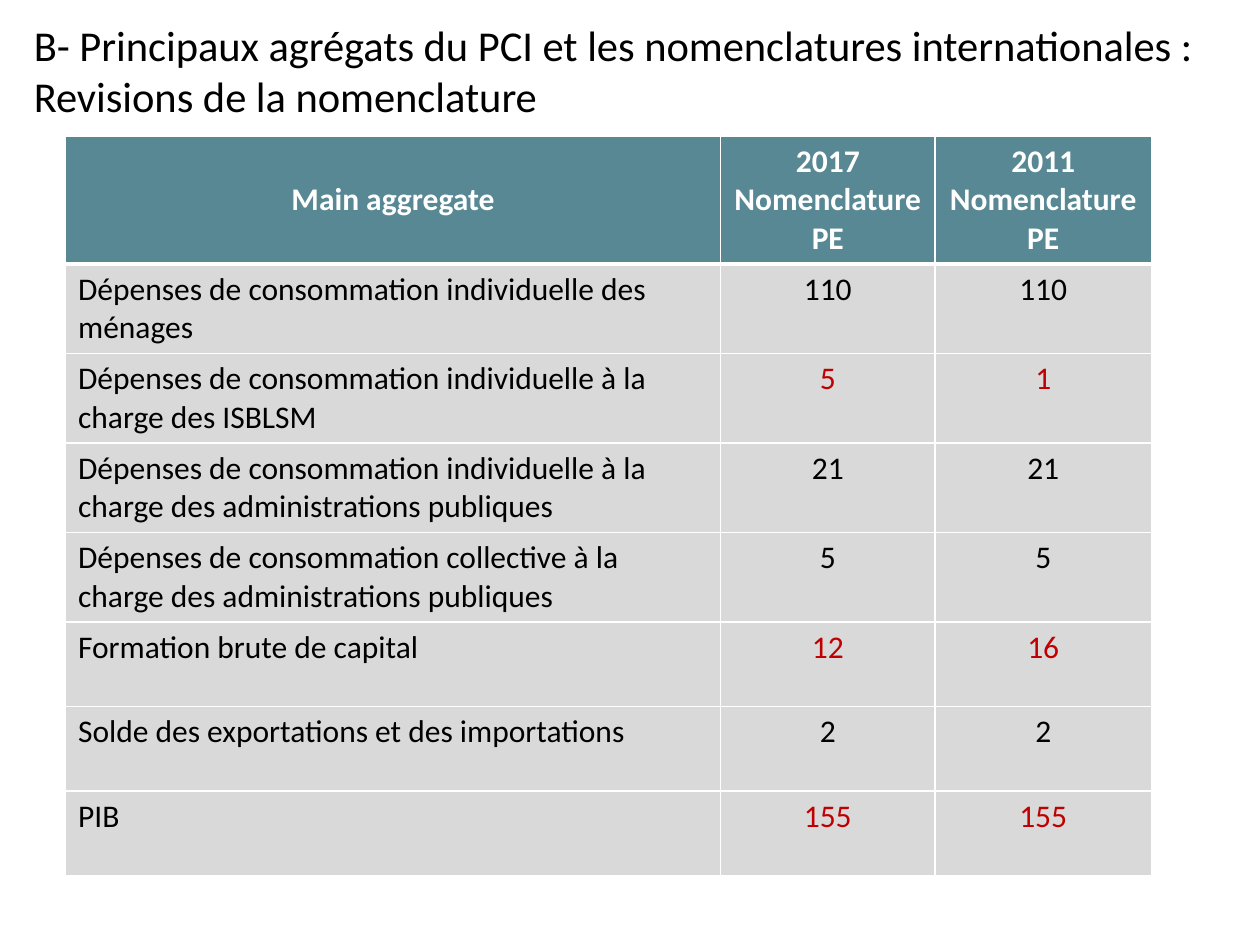
from lxml import etree
from pptx import Presentation
from pptx.dml.color import RGBColor
from pptx.enum.text import MSO_ANCHOR, PP_ALIGN
from pptx.oxml.ns import qn
from pptx.util import Inches, Pt

CENTER, LEFT = PP_ALIGN.CENTER, PP_ALIGN.LEFT
MIDDLE, TOP = MSO_ANCHOR.MIDDLE, MSO_ANCHOR.TOP

BLACK = RGBColor(0, 0, 0)
WHITE = RGBColor(255, 255, 255)
TEAL = RGBColor(0x58, 0x88, 0x94)
GREY = RGBColor(0xD9, 0xD9, 0xD9)
RED = RGBColor(0xC0, 0, 0)
FONT = "Calibri"

TITLE = ("B- Principaux agrégats du PCI et les nomenclatures internationales : "
         "Revisions de la nomenclature")
HEADER = ("Main aggregate", "2017\nNomenclature\nPE", "2011\nNomenclature\nPE")
# label, 2017 count, 2011 count, highlighted
AGGREGATES = [
    ("Dépenses de consommation individuelle des ménages", 110, 110, False),
    ("Dépenses de consommation individuelle à la charge des ISBLSM", 5, 1, True),
    ("Dépenses de consommation individuelle à la charge des administrations publiques",
     21, 21, False),
    ("Dépenses de consommation collective à la charge des administrations publiques",
     5, 5, False),
    ("Formation brute de capital", 12, 16, True),
    ("Solde des exportations et des importations", 2, 2, False),
    ("PIB", 155, 155, True),
]
COLUMN_WIDTHS = (5.2, 1.7, 1.72)
HEADER_HEIGHT, ROW_HEIGHT = 1.01, 0.67
THIN, THICK = 1, 3


def write(frame, text, size, color, bold=False, align=LEFT):
    frame.text = text
    for paragraph in frame.paragraphs:
        paragraph.alignment = align
        for run in paragraph.runs:
            font = run.font
            font.name, font.size, font.bold = FONT, Pt(size), bold
            font.color.rgb = color


def add_borders(cell, top, bottom):
    """Draw white cell borders; must precede the fill in the cell properties."""
    properties = cell._tc.get_or_add_tcPr()
    for side, width in (("L", THIN), ("R", THIN), ("T", top), ("B", bottom)):
        line = etree.SubElement(properties, qn(f"a:ln{side}"), w=str(Pt(width)))
        fill = etree.SubElement(line, qn("a:solidFill"))
        etree.SubElement(fill, qn("a:srgbClr"), val=str(WHITE))


def add_title(slide):
    box = slide.shapes.add_textbox(Inches(0.17), Inches(0.17), Inches(9.6), Inches(0.77))
    frame = box.text_frame
    frame.word_wrap = True
    frame.vertical_anchor = MIDDLE
    write(frame, TITLE, 24.3, BLACK)


def add_aggregates(slide):
    row_count = len(AGGREGATES) + 1
    height = HEADER_HEIGHT + ROW_HEIGHT * len(AGGREGATES)
    table = slide.shapes.add_table(
        row_count, len(HEADER), Inches(0.52), Inches(1.08),
        Inches(sum(COLUMN_WIDTHS)), Inches(height)).table
    for column, width in zip(table.columns, COLUMN_WIDTHS):
        column.width = Inches(width)
    for r, values in enumerate([HEADER] + [row[:3] for row in AGGREGATES]):
        is_header = r == 0
        highlighted = not is_header and AGGREGATES[r - 1][3]
        table.rows[r].height = Inches(HEADER_HEIGHT if is_header else ROW_HEIGHT)
        for c, value in enumerate(values):
            cell = table.cell(r, c)
            add_borders(cell, THICK if r == 1 else THIN, THICK if is_header else THIN)
            cell.fill.solid()
            cell.fill.fore_color.rgb = TEAL if is_header else GREY
            cell.vertical_anchor = MIDDLE if is_header else TOP
            color = WHITE if is_header else RED if highlighted and c else BLACK
            write(cell.text_frame, str(value), 18, color, is_header,
                  CENTER if is_header or c else LEFT)


def main():
    deck = Presentation()
    deck.slide_width, deck.slide_height = Inches(10), Inches(7.5)
    slide = deck.slides.add_slide(deck.slide_layouts[6])
    add_aggregates(slide)
    add_title(slide)
    deck.save("out.pptx")


if __name__ == "__main__":
    main()
